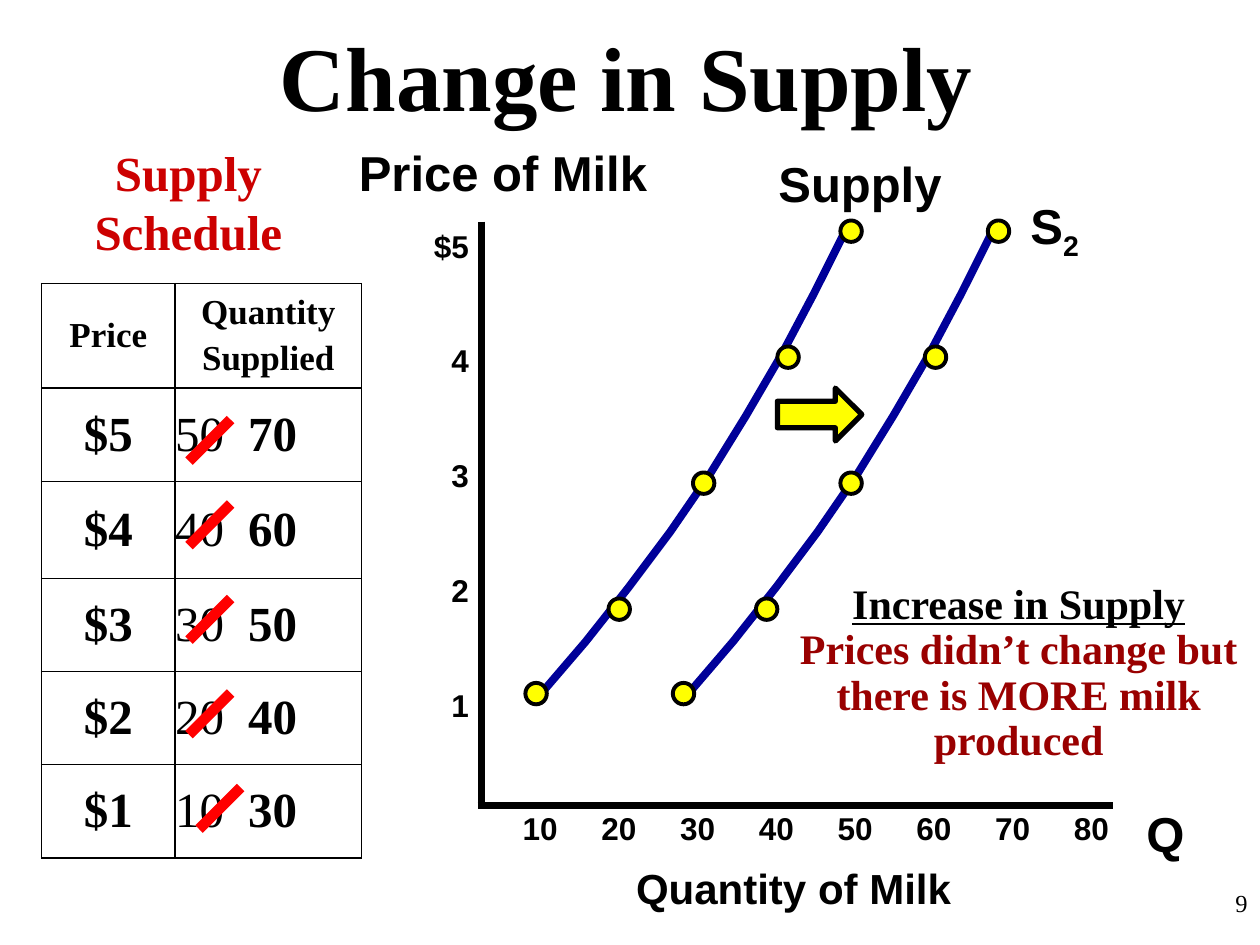
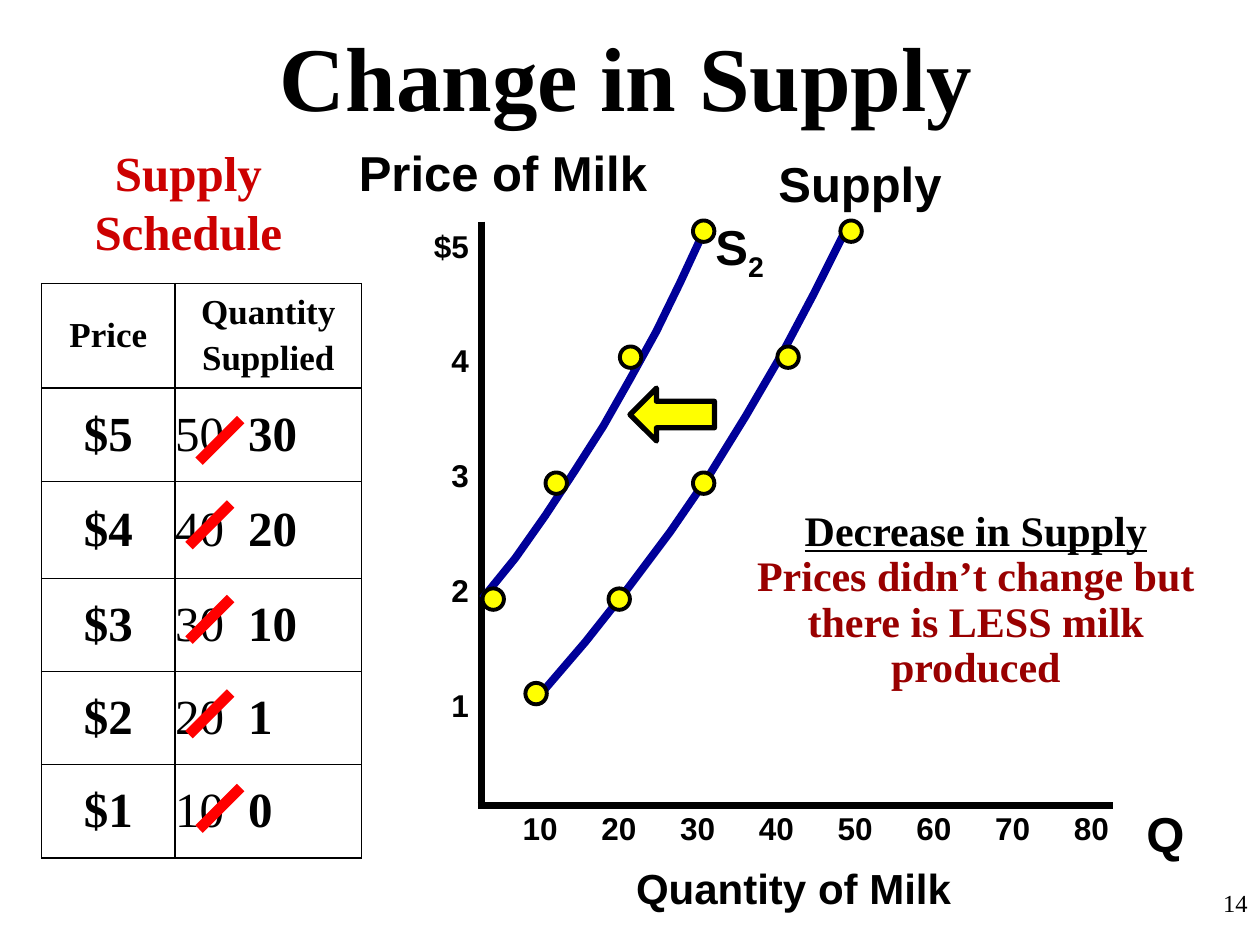
from dataclasses import dataclass
from typing import NamedTuple

from lxml import etree
from pptx import Presentation
from pptx import util as u
from pptx.dml.color import RGBColor
from pptx.enum import shapes, text
from pptx.oxml import ns

Inches, Pt = u.Inches, u.Pt
LEFT, CENTER, RIGHT = text.PP_ALIGN.LEFT, text.PP_ALIGN.CENTER, text.PP_ALIGN.RIGHT
TOP, MIDDLE = text.MSO_ANCHOR.TOP, text.MSO_ANCHOR.MIDDLE


@dataclass(frozen=True)
class Theme:
    serif: str = "Times New Roman"
    sans: str = "Arial"
    black: str = "000000"
    heading_red: str = "CC0000"
    note_red: str = "990000"
    strike_red: str = "FF0000"
    curve_blue: str = "000099"
    yellow: str = "FFFF00"
    title_size: int = 52
    label_size: int = 28
    note_size: int = 24
    header_size: int = 20
    tick_size: int = 18
    number_size: int = 14


THEME = Theme()


class Point(NamedTuple):
    x: float
    y: float


class Box(NamedTuple):
    left: float
    top: float
    width: float
    height: float

    def emu(self) -> list[int]:
        return [Inches(length) for length in self]


class Style(NamedTuple):
    size: int
    font: str = THEME.sans
    color: str = THEME.black
    bold: bool = True
    underline: bool = False


class Label(NamedTuple):
    words: str
    box: Box
    style: Style
    align: int = LEFT
    anchor: int = TOP


@dataclass(frozen=True)
class SupplyChange:
    page: int
    new_quantities: list[int]
    supply_dots: list[Point]
    new_dots: list[Point]
    new_curve: list[Point]
    new_curve_label: Point
    arrow: Point
    arrow_turn: int
    strike_lefts: list[float]
    note: Point
    note_heading: str
    note_body: str


# What both slides share
AXIS_STYLE = Style(THEME.label_size)
TICK_STYLE = Style(THEME.tick_size)
NOTE_STYLE = Style(THEME.note_size, THEME.serif)
LABELS = [
    Label("Change in Supply", Box(0.25, 0.13, 9.44, 0.94),
          Style(THEME.title_size, THEME.serif), CENTER, MIDDLE),
    Label("Q", Box(9, 6.33, 0.5, 0.57), AXIS_STYLE),
    Label("Price of Milk", Box(2.75, 1.08, 2.52, 0.57), AXIS_STYLE, LEFT, MIDDLE),
    Label("Quantity of Milk", Box(4.95, 6.79, 2.72, 0.51),
          Style(THEME.note_size), LEFT, MIDDLE),
    Label("Supply Schedule", Box(0.33, 1.08, 2.33, 1.03),
          Style(THEME.label_size, THEME.serif, THEME.heading_red), CENTER),
    Label("Supply", Box(6.08, 1.17, 1.75, 0.57), AXIS_STYLE),
]
PRICES = ["$5", "4", "3", "2", "1"]
PRICE_GAP = 44
QUANTITIES = range(10, 90, 10)
QUANTITY_STEP = 0.625
OLD_QUANTITIES = [50, 40, 30, 20, 10]
COLUMN_WIDTHS = [1.06, 1.48]
ROW_HEIGHTS = [0.83, 0.74, 0.77, 0.74, 0.74, 0.74]
NEW_QUANTITY_TAB = 0.58
STRIKE_TOPS = [3.33, 4, 4.75, 5.5, 6.25]
STRIKE_SIZE = 0.33
DOT_SIZE = 0.17
SHIFT = 1.17

CURVE_HEIGHTS = [5.51, 5.09, 4.66, 4.22, 3.77, 3.3, 2.82, 2.33, 1.83]
SUPPLY_CURVE = [Point(x, y) for x, y in zip(
    [4.29, 4.65, 4.99, 5.32, 5.63, 5.92, 6.2, 6.46, 6.71], CURVE_HEIGHTS)]
SUPPLY_DOTS = [Point(4.17, 5.42), Point(4.83, 4.75), Point(5.5, 3.75),
               Point(6.17, 2.75), Point(6.67, 1.75)]


def shifted(points: list[Point], dx: float) -> list[Point]:
    return [Point(point.x + dx, point.y) for point in points]


CHANGES = [
    SupplyChange(
        page=9, new_quantities=[70, 60, 50, 40, 30],
        supply_dots=SUPPLY_DOTS, new_dots=shifted(SUPPLY_DOTS, SHIFT),
        new_curve=shifted(SUPPLY_CURVE, SHIFT), new_curve_label=Point(8.08, 1.5),
        arrow=Point(6.17, 3.08), arrow_turn=0,
        strike_lefts=[1.5, 1.5, 1.5, 1.5, 1.58], note=Point(6.17, 4.58),
        note_heading="Increase in Supply",
        note_body="Prices didn’t change but there is MORE milk produced"),
    SupplyChange(
        page=14, new_quantities=[30, 20, 10, 1, 0],
        supply_dots=[SUPPLY_DOTS[0], Point(4.83, 4.67), *SUPPLY_DOTS[2:]],
        new_dots=[Point(3.83, 4.67), Point(4.33, 3.75),
                  Point(4.92, 2.75), Point(5.5, 1.75)],
        new_curve=[Point(3.83, 4.75), Point(4.09, 4.43), Point(4.33, 4.09),
                   Point(4.56, 3.74), Point(4.79, 3.38), Point(5, 3.01),
                   Point(5.21, 2.63), Point(5.4, 2.24), Point(5.59, 1.83)],
        new_curve_label=Point(5.58, 1.67),
        arrow=Point(5, 3.08), arrow_turn=180,
        strike_lefts=[1.58, 1.5, 1.5, 1.5, 1.58], note=Point(5.83, 4),
        note_heading="Decrease in Supply",
        note_body="Prices didn’t change but there is LESS milk produced"),
]


# Text helpers
def style_runs(paragraph, style: Style, align: int = LEFT) -> None:
    paragraph.alignment = align
    for run in paragraph.runs:
        font = run.font
        font.name, font.size = style.font, Pt(style.size)
        font.bold, font.underline = style.bold, style.underline
        font.color.rgb = RGBColor.from_string(style.color)


def set_tabs(paragraph, stops: list[float]) -> None:
    tabs = etree.SubElement(paragraph._p.get_or_add_pPr(), ns.qn("a:tabLst"))
    for stop in stops:
        etree.SubElement(tabs, ns.qn("a:tab"), pos=str(Inches(stop)), algn="l")


def add_label(slide, label: Label):
    frame = slide.shapes.add_textbox(*label.box.emu()).text_frame
    frame.word_wrap = True
    frame.vertical_anchor = label.anchor
    frame.text = label.words
    for paragraph in frame.paragraphs:
        style_runs(paragraph, label.style, label.align)
    return frame


# Drawing helpers
def set_line(shape, color: str, width: float) -> None:
    shape.line.color.rgb = RGBColor.from_string(color)
    shape.line.width = Pt(width)


def add_line(slide, start: Point, end: Point, color: str, width: float) -> None:
    line = slide.shapes.add_connector(
        shapes.MSO_CONNECTOR.STRAIGHT, *[Inches(v) for v in (*start, *end)])
    set_line(line, color, width)
    etree.SubElement(line._element.spPr, ns.qn("a:effectLst"))


def add_curve(slide, points: list[Point]) -> None:
    start, *rest = [(Inches(point.x), Inches(point.y)) for point in points]
    builder = slide.shapes.build_freeform(*start)
    builder.add_line_segments(rest, close=False)
    curve = builder.convert_to_shape()
    curve.fill.background()
    curve.shadow.inherit = False
    set_line(curve, THEME.curve_blue, 4.5)


def add_marker(slide, kind: int, box: Box, width: float):
    marker = slide.shapes.add_shape(kind, *box.emu())
    marker.shadow.inherit = False
    marker.fill.solid()
    marker.fill.fore_color.rgb = RGBColor.from_string(THEME.yellow)
    set_line(marker, THEME.black, width)
    return marker


def add_dots(slide, dots: list[Point]) -> None:
    for dot in dots:
        add_marker(slide, shapes.MSO_SHAPE.OVAL, Box(*dot, DOT_SIZE, DOT_SIZE), 2.25)


def add_axes(slide) -> None:
    add_line(slide, Point(3.82, 1.76), Point(3.82, 6.42), THEME.black, 4)
    add_line(slide, Point(3.79, 6.39), Point(8.83, 6.39), THEME.black, 4)
    prices = add_label(slide, Label("\n".join(PRICES), Box(3.32, 1.75, 0.5, 4),
                                    TICK_STYLE, RIGHT))
    for paragraph in prices.paragraphs[1:]:
        paragraph.space_before = Pt(PRICE_GAP)
    quantities = add_label(slide, Label("\t".join(map(str, QUANTITIES)),
                                        Box(4.05, 6.37, 4.95, 0.4), TICK_STYLE))
    set_tabs(quantities.paragraphs[0],
             [QUANTITY_STEP * i for i in range(1, len(QUANTITIES))])


# Supply schedule
def format_cell(cell) -> None:
    cell.margin_left = cell.margin_right = cell.margin_top = cell.margin_bottom = 0
    cell.vertical_anchor = MIDDLE
    properties = cell._tc.get_or_add_tcPr()
    for side in ("lnL", "lnR", "lnT", "lnB"):
        border = etree.SubElement(properties, ns.qn(f"a:{side}"), w=str(Pt(1)))
        fill = etree.SubElement(border, ns.qn("a:solidFill"))
        etree.SubElement(fill, ns.qn("a:srgbClr"), val=THEME.black)
    cell.fill.background()


def add_schedule(slide, change: SupplyChange) -> None:
    box = Box(0.33, 2.25, sum(COLUMN_WIDTHS), sum(ROW_HEIGHTS))
    table = slide.shapes.add_table(
        len(ROW_HEIGHTS), len(COLUMN_WIDTHS), *box.emu()).table
    table.first_row = table.horz_banding = False
    for column, width in zip(table.columns, COLUMN_WIDTHS):
        column.width = Inches(width)
    for row, height in zip(table.rows, ROW_HEIGHTS):
        row.height = Inches(height)
    for cell in table.iter_cells():
        format_cell(cell)

    header = Style(THEME.header_size, THEME.serif)
    for column, words in enumerate(["Price", "Quantity\nSupplied"]):
        frame = table.cell(0, column).text_frame
        frame.text = words
        for paragraph in frame.paragraphs:
            style_runs(paragraph, header, CENTER)
    table.cell(0, 1).text_frame.paragraphs[1].space_before = Pt(4)

    body = Style(THEME.label_size, THEME.serif)
    for row, (old, new) in enumerate(zip(OLD_QUANTITIES, change.new_quantities), 1):
        price = table.cell(row, 0).text_frame.paragraphs[0]
        price.text = f"${6 - row}"
        style_runs(price, body, CENTER)
        quantity = table.cell(row, 1).text_frame.paragraphs[0]
        quantity.text = f"{old}\t"
        quantity.add_run().text = str(new)
        style_runs(quantity, body)
        quantity.runs[0].font.bold = False
        set_tabs(quantity, [NEW_QUANTITY_TAB])

    for left, top in zip(change.strike_lefts, STRIKE_TOPS):
        add_line(slide, Point(left, top + STRIKE_SIZE),
                 Point(left + STRIKE_SIZE, top), THEME.strike_red, 6)


# One slide
def add_change_slide(deck, change: SupplyChange) -> None:
    slide = deck.slides.add_slide(deck.slide_layouts[6])
    add_curve(slide, SUPPLY_CURVE)
    add_axes(slide)
    for label in LABELS:
        add_label(slide, label)
    add_label(slide, Label(str(change.page), Box(7.92, 7, 2.08, 0.5),
                           Style(THEME.number_size, THEME.serif, bold=False), RIGHT))
    add_dots(slide, change.supply_dots)

    # Shifted supply
    add_curve(slide, change.new_curve)
    add_dots(slide, change.new_dots)
    curve_name = add_label(
        slide, Label("S", Box(*change.new_curve_label, 0.61, 0.57), AXIS_STYLE))
    subscript = curve_name.paragraphs[0].add_run()
    subscript.text = "2"
    style_runs(curve_name.paragraphs[0], AXIS_STYLE)
    subscript._r.get_or_add_rPr().set("baseline", "-25000")
    arrow = add_marker(slide, shapes.MSO_SHAPE.RIGHT_ARROW,
                       Box(*change.arrow, 0.67, 0.42), 3)
    arrow.rotation = change.arrow_turn

    add_schedule(slide, change)

    # Explanation
    note = add_label(slide, Label(f"{change.note_heading}\n{change.note_body}",
                                  Box(*change.note, 3.83, 1.56), NOTE_STYLE, CENTER))
    heading, body = note.paragraphs
    style_runs(heading, NOTE_STYLE._replace(underline=True), CENTER)
    style_runs(body, NOTE_STYLE._replace(color=THEME.note_red), CENTER)
    heading.line_spacing = body.line_spacing = 0.9


def main() -> None:
    deck = Presentation()
    deck.slide_width, deck.slide_height = Inches(10), Inches(7.5)
    for change in CHANGES:
        add_change_slide(deck, change)
    deck.save("out.pptx")


if __name__ == "__main__":
    main()
